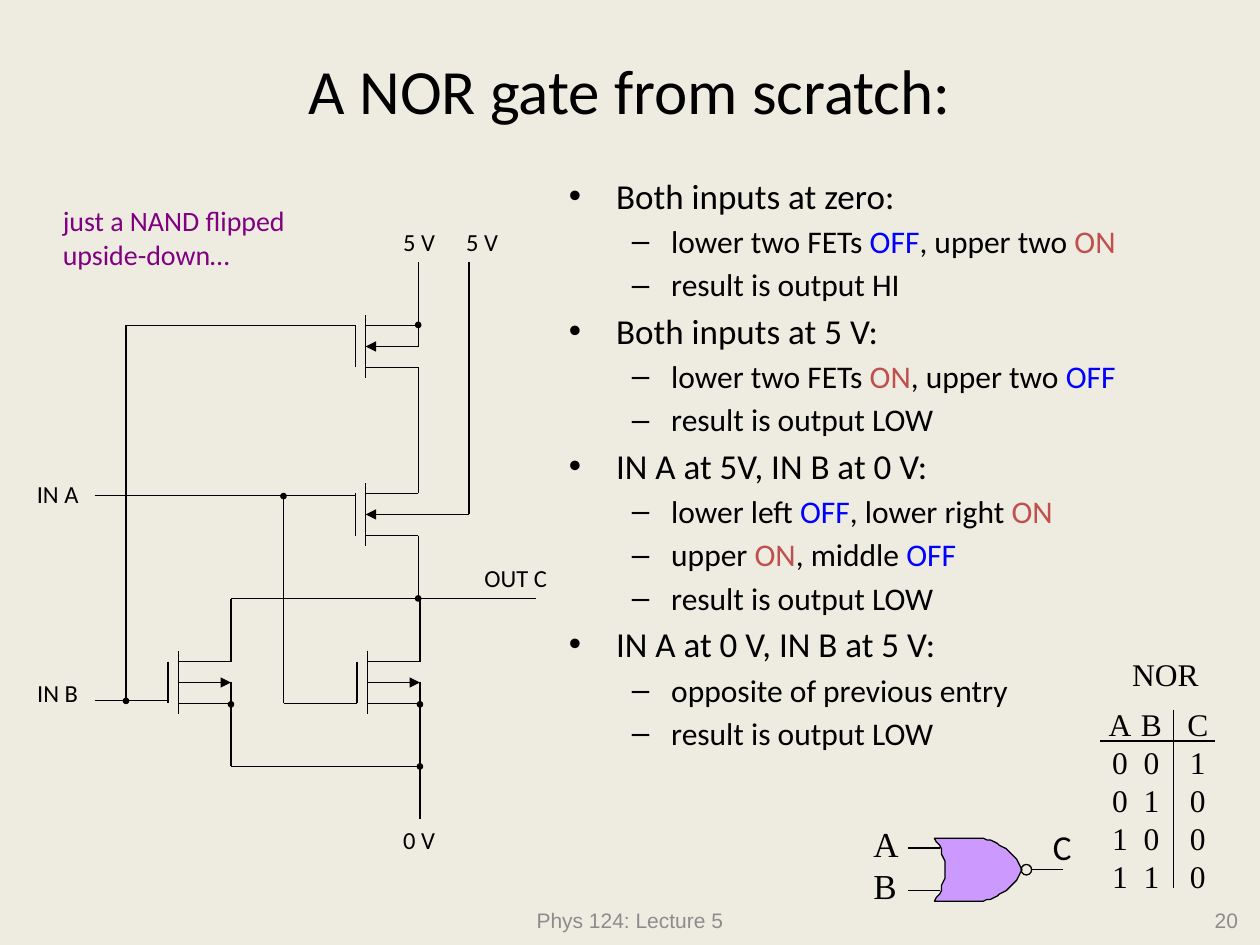
"""Build the lecture slide on making a NOR gate from field-effect transistors."""
from dataclasses import dataclass

from pptx import Presentation
from pptx import util as u
from pptx.dml.color import RGBColor
from pptx.enum import shapes, text
from pptx.oxml import ns, xmlchemy

Pt = u.Pt
BLACK, GREY, PURPLE, LILAC = "000000", "8C8C8C", "800080", "CC99FF"
STATE_COLOURS = {"OFF": "0000FF", "ON": "C0504D"}
LEFT, CENTRE, RIGHT = text.PP_ALIGN.LEFT, text.PP_ALIGN.CENTER, text.PP_ALIGN.RIGHT
TOP, MIDDLE = text.MSO_ANCHOR.TOP, text.MSO_ANCHOR.MIDDLE
SERIF = "Times New Roman"
NO_GRID_STYLE = "{2D5ABB26-0587-4C30-8999-92F81FD0307C}"


@dataclass
class Label:
    wording: str
    box: tuple
    size: float = 14
    font: str = "Calibri"
    colour: str = BLACK
    align: int = CENTRE
    anchor: int = TOP
    wrap: bool = False


@dataclass
class Transistor:
    gate: float
    top: float
    arrow_in: bool
    bulk_x: float
    bulk_joins: float


@dataclass
class BulletLevel:
    size: float
    margin: float
    hang: float
    gap: float
    mark: str


LEVELS = (BulletLevel(20, 27, 27, 3.6, "•"), BulletLevel(18, 58.5, 22.5, 3.2, "–"))

LABELS = (
    Label("Phys 124: Lecture 5", (246, 511, 228, 29), 12, "Arial", GREY, anchor=MIDDLE, wrap=True),
    Label("20", (546.5, 511, 168, 29), 12, "Arial", GREY, RIGHT, MIDDLE, True),
    Label("A NOR gate from scratch:", (54, 6, 612, 90), 36, anchor=MIDDLE, wrap=True),
    Label("just a NAND flipped\nupside-down…", (28.8, 113, 153, 46), 16, colour=PURPLE, align=LEFT, wrap=True),
    Label("5 V", (222, 126, 35, 24)),
    Label("5 V", (258, 126, 35, 24)),
    Label("0 V", (222, 468, 35, 24)),
    Label("IN A", (12, 270, 42, 24)),
    Label("IN B", (12, 384, 42, 24)),
    Label("OUT C", (265.5, 318, 58.5, 24)),
    Label("NOR", (633.5, 371, 65, 36), 18, SERIF),
    Label("A\nB", (492, 466.5, 29, 55.5), 20, SERIF, align=LEFT),
    Label("C", (594.5, 468, 29, 31), 20, align=LEFT, wrap=True),
)

BODY = (
    (0, "Both inputs at zero:"),
    (1, "lower two FETs |OFF|, upper two |ON"),
    (1, "result is output HI"),
    (0, "Both inputs at 5 V:"),
    (1, "lower two FETs |ON|, upper two |OFF"),
    (1, "result is output LOW"),
    (0, "IN A at 5V, IN B at 0 V:"),
    (1, "lower left |OFF|, lower right |ON"),
    (1, "upper |ON|, middle |OFF"),
    (1, "result is output LOW"),
    (0, "IN A at 0 V, IN B at 5 V:"),
    (1, "opposite of previous entry"),
    (1, "result is output LOW"),
)

TRANSISTORS = (
    Transistor(203, 186, True, 239, 186),
    Transistor(203, 282, True, 268, 294),
    Transistor(96, 378, False, 132, 402),
    Transistor(204, 378, False, 240, 402),
)

WIRES = (
    ((72, 402), (72, 186), (203, 186)),
    ((54, 283), (203, 283)),
    ((162, 282), (162, 402), (204, 402)),
    ((54, 400.5), (96, 400.5)),
    ((239, 150), (239, 186)),
    ((239, 210), (239, 282)),
    ((239, 306), (239, 342)),
    ((268, 150), (268, 294)),
    ((132, 378), (132, 342), (306, 342)),
    ((240, 342), (240, 378)),
    ((132, 402), (132, 438), (240, 438)),
    ((240, 402), (240, 468)),
)
JUNCTIONS = ((239, 185.7), (240, 402.5), (132, 402.5), (72, 400.5), (239, 342), (162, 283.5), (240, 438))
GATE_LEADS = (((519, 484.5), (537, 484.5)), ((519, 509), (537, 509)), ((589.5, 497), (607.5, 497)))
TRUTH_RULES = (((628.5, 423.5), (694.5, 423.5)), ((670.5, 405.5), (670.5, 507.5)))
TRUTH = ("ABC", "001", "010", "100", "110")
TRUTH_WIDTHS = (18, 18, 35)


def colour_of(code: str) -> RGBColor:
    """Turn a hex string into a colour."""
    return RGBColor.from_string(code)


def write(paragraph, wording: str, *, size=14, font="Calibri", colour=BLACK, align=LEFT) -> None:
    """Fill a paragraph, with bars between runs and state words in their colours."""
    paragraph.alignment = align
    for part in wording.split("|"):
        run = paragraph.add_run()
        run.text = part
        run.font.size, run.font.name = Pt(size), font
        run.font.color.rgb = colour_of(STATE_COLOURS.get(part, colour))


def draw_label(slide, label: Label) -> None:
    """Draw a label with one paragraph per line."""
    frame = slide.shapes.add_textbox(*map(Pt, label.box)).text_frame
    frame.word_wrap, frame.vertical_anchor = label.wrap, label.anchor
    for index, line in enumerate(label.wording.split("\n")):
        paragraph = frame.add_paragraph() if index else frame.paragraphs[0]
        write(paragraph, line, size=label.size, font=label.font, colour=label.colour, align=label.align)


def draw_body(slide) -> None:
    """Draw the two-level bulleted explanation."""
    frame = slide.shapes.add_textbox(Pt(318), Pt(96), Pt(390), Pt(396)).text_frame
    frame.word_wrap = True
    for index, (depth, wording) in enumerate(BODY):
        level = LEVELS[depth]
        paragraph = frame.add_paragraph() if index else frame.paragraphs[0]
        write(paragraph, wording, size=level.size)
        paragraph.level, paragraph.space_before = depth, Pt(level.gap)
        properties = paragraph._p.get_or_add_pPr()
        properties.set("marL", str(Pt(level.margin)))
        properties.set("indent", str(-Pt(level.hang)))
        for tag, key, value in (("a:buFont", "typeface", "Arial"), ("a:buChar", "char", level.mark)):
            bullet = xmlchemy.OxmlElement(tag)
            bullet.set(key, value)
            properties.append(bullet)


def draw_wire(slide, *corners: tuple, arrow: bool = False) -> None:
    """Draw straight lines through the corners, with an optional arrowhead."""
    for start, end in zip(corners, corners[1:]):
        wire = slide.shapes.add_connector(shapes.MSO_CONNECTOR.STRAIGHT, *map(Pt, start + end))
        wire.line.color.rgb, wire.line.width = colour_of(BLACK), Pt(0.75)
        if arrow:
            head = xmlchemy.OxmlElement("a:tailEnd")
            head.set("type", "triangle")
            wire.element.spPr.find(ns.qn("a:ln")).append(head)
        wire.element.spPr.append(xmlchemy.OxmlElement("a:effectLst"))


def finish(shape, fill: str | None) -> None:
    """Give a shape a thin black outline and its fill."""
    shape.shadow.inherit = False
    shape.line.color.rgb, shape.line.width = colour_of(BLACK), Pt(0.75)
    if fill:
        shape.fill.solid()
        shape.fill.fore_color.rgb = colour_of(fill)
    else:
        shape.fill.background()


def draw_circle(slide, centre: tuple, size: float, fill: str | None) -> None:
    """Draw a circle around its centre."""
    corner = [Pt(value - size / 2) for value in centre]
    finish(slide.shapes.add_shape(shapes.MSO_SHAPE.OVAL, *corner, Pt(size), Pt(size)), fill)


def draw_transistor(slide, fet: Transistor) -> None:
    """Draw the gate bar, channel, two contacts and bulk arrow."""
    channel, drain = fet.gate + 6, fet.gate + 36
    middle, bottom = fet.top + 12, fet.top + 24
    draw_wire(slide, (fet.gate, fet.top), (fet.gate, bottom))
    draw_wire(slide, (channel, fet.top - 6), (channel, bottom + 6))
    for contact in (fet.top, bottom):
        draw_wire(slide, (channel, contact), (drain, contact))
    ends = ((channel, middle), (fet.bulk_x, middle))
    draw_wire(slide, *(ends[::-1] if fet.arrow_in else ends), arrow=True)
    if fet.bulk_joins != middle:
        draw_wire(slide, (fet.bulk_x, middle), (fet.bulk_x, fet.bulk_joins))


def curve(*controls: tuple, steps: int = 16) -> list:
    """Sample a cubic curve from its four control points."""
    return [
        tuple(sum(w * c[axis] for w, c in zip(((1 - t) ** 3, 3 * t * (1 - t) ** 2, 3 * t * t * (1 - t), t ** 3), controls))
              for axis in (0, 1))
        for t in (step / steps for step in range(steps + 1))
    ]


def draw_gate_symbol(slide) -> None:
    """Draw the NOR symbol with its leads and inverting circle."""
    top, middle, bottom = 479, 497, 515
    outline = (curve((558, top), (569, top), (578.5, 485.5), (584, middle))
               + curve((584, middle), (578.5, 508.5), (569, bottom), (558, bottom))
               + curve((534, bottom), (542, 504), (542, 490), (534, top)))
    builder = slide.shapes.build_freeform(*outline[0], scale=Pt(1))
    builder.add_line_segments(outline[1:], close=True)
    finish(builder.convert_to_shape(), LILAC)
    for lead in GATE_LEADS:
        draw_wire(slide, *lead)
    draw_circle(slide, (586.5, middle), 6, None)


def draw_truth_table(slide) -> None:
    """Draw the truth table and its two rules."""
    holder = slide.shapes.add_table(5, 3, Pt(631), Pt(404), Pt(sum(TRUTH_WIDTHS)), Pt(108))
    holder.element.xpath(".//a:tableStyleId")[0].text = NO_GRID_STYLE
    truth = holder.table
    truth.first_row = truth.horz_banding = False
    for column, width in zip(truth.columns, TRUTH_WIDTHS):
        column.width = Pt(width)
    for row, values in enumerate(TRUTH):
        for column, value in enumerate(values):
            cell = truth.cell(row, column)
            cell.margin_left = cell.margin_right = cell.margin_top = cell.margin_bottom = 0
            cell.vertical_anchor = MIDDLE
            cell.fill.background()
            write(cell.text_frame.paragraphs[0], value, size=18, font=SERIF, align=CENTRE)
    for rule in TRUTH_RULES:
        draw_wire(slide, *rule)


def main() -> None:
    """Assemble and save the slide."""
    deck = Presentation()
    deck.slide_width, deck.slide_height = Pt(720), Pt(540)
    slide = deck.slides.add_slide(deck.slide_layouts[6])
    slide.background.fill.solid()
    slide.background.fill.fore_color.rgb = colour_of("EEECE1")
    for label in LABELS:
        draw_label(slide, label)
    draw_body(slide)
    draw_truth_table(slide)
    for fet in TRANSISTORS:
        draw_transistor(slide, fet)
    for wire in WIRES:
        draw_wire(slide, *wire)
    for junction in JUNCTIONS:
        draw_circle(slide, junction, 3, BLACK)
    draw_gate_symbol(slide)
    deck.save("out.pptx")


if __name__ == "__main__":
    main()
